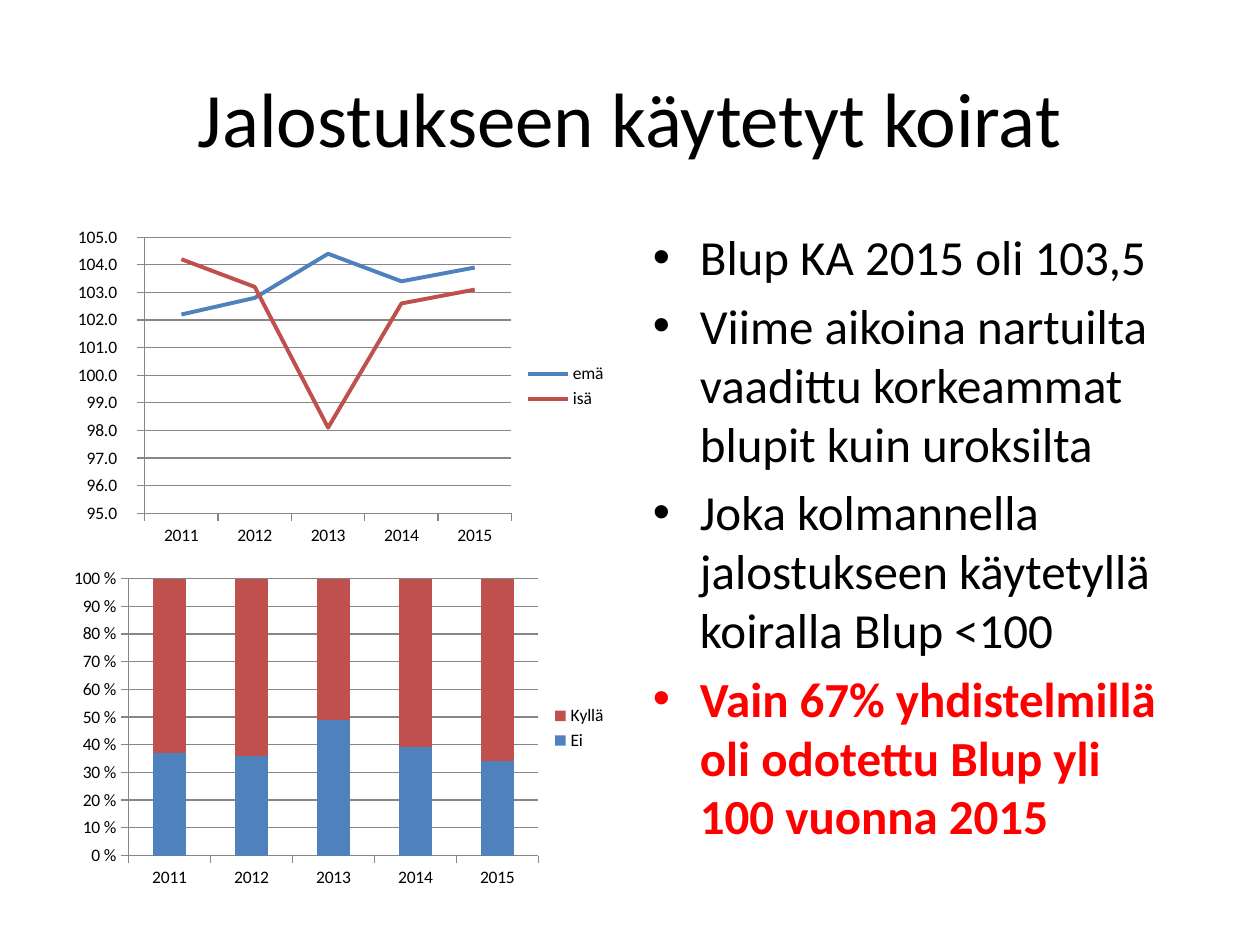
from lxml import etree
from pptx import Presentation
from pptx.chart.data import CategoryChartData
from pptx.dml.color import RGBColor
from pptx.enum.chart import XL_CHART_TYPE, XL_LEGEND_POSITION, XL_TICK_MARK
from pptx.enum.text import MSO_ANCHOR, PP_ALIGN
from pptx.oxml.ns import qn
from pptx.util import Cm, Pt

LINE = XL_CHART_TYPE.LINE
STACKED = XL_CHART_TYPE.COLUMN_STACKED_100
RIGHT = XL_LEGEND_POSITION.RIGHT
OUTSIDE = XL_TICK_MARK.OUTSIDE
MIDDLE, TOP = MSO_ANCHOR.MIDDLE, MSO_ANCHOR.TOP
CENTER = PP_ALIGN.CENTER

FONT = "Calibri"
BLACK, RED, GRAY = "000000", "FF0000", "868686"
SERIES_COLORS = ("4F81BD", "C0504D")
YEARS = ("2011", "2012", "2013", "2014", "2015")
MARGIN, COLUMN_WIDTH = 1.27, 11.22

PARENT_BLUP = {
    "emä": (102.2, 102.8, 104.4, 103.4, 103.9),
    "isä": (104.2, 103.2, 98.1, 102.6, 103.1),
}
OVER_HUNDRED = {
    "Ei": (37, 36, 49, 39, 34),
    "Kyllä": (63, 64, 51, 61, 66),
}
# Text, colour, bold
POINTS = (
    ("Blup KA 2015 oli 103,5", BLACK, False),
    ("Viime aikoina nartuilta vaadittu korkeammat blupit kuin uroksilta", BLACK, False),
    ("Joka kolmannella jalostukseen käytetyllä koiralla Blup <100", BLACK, False),
    ("Vain 67% yhdistelmillä oli odotettu Blup yli 100 vuonna 2015", RED, True),
)


def color(value):
    return RGBColor.from_string(value)


def style_font(font, size, value=BLACK, bold=False):
    font.name = FONT
    font.size = Pt(size)
    font.bold = bold
    font.color.rgb = color(value)


def add_box(page, left, top, width, height, anchor):
    box = page.shapes.add_textbox(Cm(left), Cm(top), Cm(width), Cm(height))
    frame = box.text_frame
    frame.word_wrap = True
    frame.vertical_anchor = anchor
    return frame


def add_span(para, text, size, value=BLACK, bold=False):
    span = para.add_run()
    span.text = text
    style_font(span.font, size, value, bold)


def add_bullet(para):
    para.space_before = Pt(5.6)
    properties = para._p.get_or_add_pPr()
    indent = Cm(0.95)
    properties.set("marL", str(indent))
    properties.set("indent", str(-indent))
    etree.SubElement(properties, qn("a:buFont")).set("typeface", "Arial")
    etree.SubElement(properties, qn("a:buChar")).set("char", "•")


def add_chart(page, kind, top, height, values, number_format):
    data = CategoryChartData()
    data.categories = YEARS
    for name, numbers in values.items():
        data.add_series(name, numbers)
    frame = page.shapes.add_chart(
        kind, Cm(MARGIN), Cm(top), Cm(COLUMN_WIDTH), Cm(height), data)
    chart = frame.chart
    chart.has_title = False
    style_font(chart.font, 10)

    # Legend
    chart.has_legend = True
    chart.legend.position = RIGHT
    chart.legend.include_in_layout = False

    # Axes and gridlines
    value_axis = chart.value_axis
    value_axis.has_major_gridlines = True
    value_axis.tick_labels.number_format = number_format
    value_axis.tick_labels.number_format_is_linked = False
    lines = [value_axis.major_gridlines.format.line]
    for axis in (value_axis, chart.category_axis):
        axis.major_tick_mark = OUTSIDE
        lines.append(axis.format.line)
    for line in lines:
        line.color.rgb = color(GRAY)
        line.width = Pt(0.75)
    return chart


def add_line_chart(page):
    chart = add_chart(page, LINE, 4.45, 6.68, PARENT_BLUP,
                      r"_-* #,##0.0\ _€_-;\-* #,##0.0\ _€_-;_-* ")
    chart.value_axis.minimum_scale = 95
    chart.value_axis.maximum_scale = 105
    chart.value_axis.major_unit = 1
    for series, value in zip(chart.plots[0].series, SERIES_COLORS):
        series.smooth = False
        series.format.line.color.rgb = color(value)
        series.format.line.width = Pt(2.25)


def add_share_chart(page):
    chart = add_chart(page, STACKED, 11.33, 6.7, OVER_HUNDRED, "0 %")
    chart.value_axis.major_unit = 0.1
    plot = chart.plots[0]
    plot.vary_by_categories = False
    plot.gap_width = 150
    plot.overlap = 100
    for series, value in zip(plot.series, SERIES_COLORS):
        series.format.fill.solid()
        series.format.fill.fore_color.rgb = color(value)


def main():
    deck = Presentation()
    deck.slide_width, deck.slide_height = Cm(25.4), Cm(19.05)
    page = deck.slides.add_slide(deck.slide_layouts[6])

    # Title
    title = add_box(page, MARGIN, 0.76, 22.86, 3.18, MIDDLE).paragraphs[0]
    title.alignment = CENTER
    add_span(title, "Jalostukseen käytetyt koirat", 44)

    # Charts on the left
    add_line_chart(page)
    add_share_chart(page)

    # Bullet points on the right
    body = add_box(page, 12.91, 4.45, COLUMN_WIDTH, 12.57, TOP)
    for index, (text, value, bold) in enumerate(POINTS):
        para = body.add_paragraph() if index else body.paragraphs[0]
        add_bullet(para)
        add_span(para, text, 28, value, bold)

    deck.save("out.pptx")


if __name__ == "__main__":
    main()
